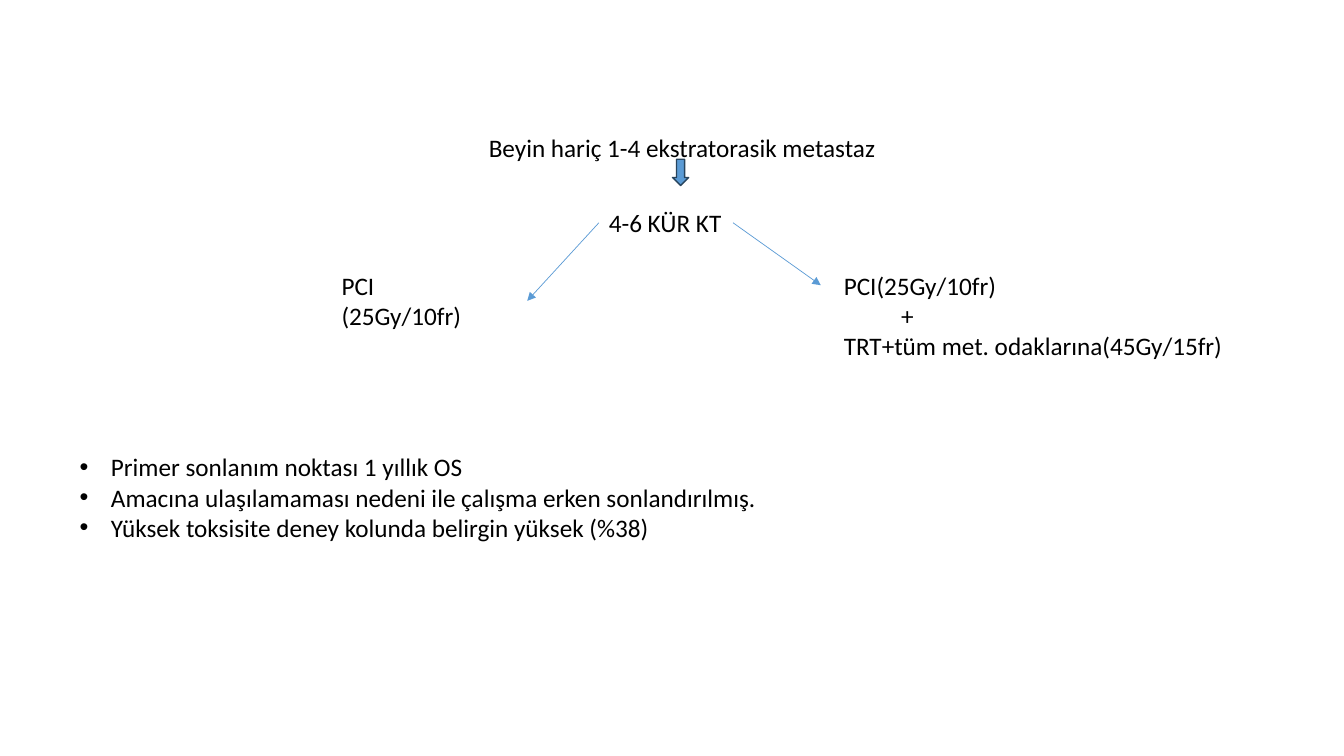
from lxml import etree
from pptx import Presentation, util as u
from pptx.dml.color import RGBColor
from pptx.enum import shapes, text
from pptx.oxml.ns import qn

BLACK = RGBColor(0x00, 0x00, 0x00)
BLUE = RGBColor(0x5B, 0x9B, 0xD5)
NAVY = RGBColor(0x28, 0x44, 0x5D)
LETTERING = {"name": "Calibri", "size": u.Pt(18)}
TIGHT = {"space_before": u.Pt(0), "space_after": u.Pt(0), "line_spacing": 1.0}

# Boxes are left, top, width, height in percent of the slide.
PATIENTS = (["Beyin hariç 1-4 ekstratorasik metastaz"], (35.63, 16.8, 30.53, 5.33), False)
CHEMO = (["4-6 KÜR KT"], (44.56, 26.8, 9.98, 5.33), False)
CONTROL_ARM = (["PCI", "(25Gy/10fr)"], (24.68, 35.07, 14.55, 9.47), True)
TRIAL_ARM = (["PCI(25Gy/10fr)", "+", "TRT+tüm met. odaklarına(45Gy/15fr)"],
             (62.04, 35.07, 30.01, 13.47), False)
FINDINGS = (["Primer sonlanım noktası 1 yıllık OS",
             "Amacına ulaşılamaması nedeni ile çalışma erken sonlandırılmış.",
             "Yüksek toksisite deney kolunda belirgin yüksek (%38)"],
            (5.18, 59.07, 52.36, 13.47), False)
STEP_DOWN = (50.04, 21.07, 1.2, 3.47)
CONTROL_TIP = (39.23, 39.8)
TRIAL_TIP = (61.07, 37.73)
PLUS_INDENT = u.Inches(0.57)
BULLET_INDENT = u.Inches(0.31)

deck = Presentation()
deck.slide_width, deck.slide_height = u.Inches(13.33), u.Inches(7.5)
slide = deck.slides.add_slide(deck.slide_layouts[1])
slide.shapes.title.element.getparent().remove(slide.shapes.title.element)


def place(shares):
    sides = (deck.slide_width, deck.slide_height) * 2
    return [round(side * share / 100) for side, share in zip(sides, shares)]


def apply(target, values):
    for key, value in values.items():
        setattr(target, key, value)


def write(holder, lines, wrap):
    frame = holder.text_frame
    frame.text = "\n".join(lines)
    apply(frame, {"word_wrap": wrap, "vertical_anchor": text.MSO_ANCHOR.TOP,
                  "auto_size": text.MSO_AUTO_SIZE.SHAPE_TO_FIT_TEXT})
    for paragraph in frame.paragraphs:
        apply(paragraph, TIGHT)
        apply(paragraph.font, LETTERING)
        paragraph.font.color.rgb = BLACK
        if paragraph.text == "+":
            paragraph._p.get_or_add_pPr().set("marL", str(PLUS_INDENT))


def branch(start, tip):
    arrow = slide.shapes.add_connector(shapes.MSO_CONNECTOR.STRAIGHT,
                                       *place(start), *place(tip))
    arrow.line.color.rgb = BLUE
    arrow.line.width = u.Pt(0.5)
    etree.SubElement(arrow.line._get_or_add_ln(), qn("a:tailEnd"), type="triangle")
    etree.SubElement(arrow._element.spPr, qn("a:effectLst"))


for lines, box, wrap in (PATIENTS, CONTROL_ARM, TRIAL_ARM, CHEMO):
    write(slide.shapes.add_textbox(*place(box)), lines, wrap)

step = slide.shapes.add_shape(shapes.MSO_SHAPE.DOWN_ARROW, *place(STEP_DOWN))
step.shadow.inherit = False
step.fill.solid()
step.fill.fore_color.rgb = BLUE
step.line.color.rgb = NAVY
step.line.width = u.Pt(1)

left, top, width, height = CHEMO[1]
middle = top + height / 2
branch((left, middle), CONTROL_TIP)
branch((left + width, middle), TRIAL_TIP)

lines, box, wrap = FINDINGS
findings = slide.placeholders[1]
apply(findings, dict(zip(("left", "top", "width", "height"), place(box))))
write(findings, lines, wrap)
for paragraph in findings.text_frame.paragraphs:
    properties = paragraph._p.get_or_add_pPr()
    properties.set("marL", str(BULLET_INDENT))
    properties.set("indent", str(-BULLET_INDENT))

deck.save("out.pptx")
